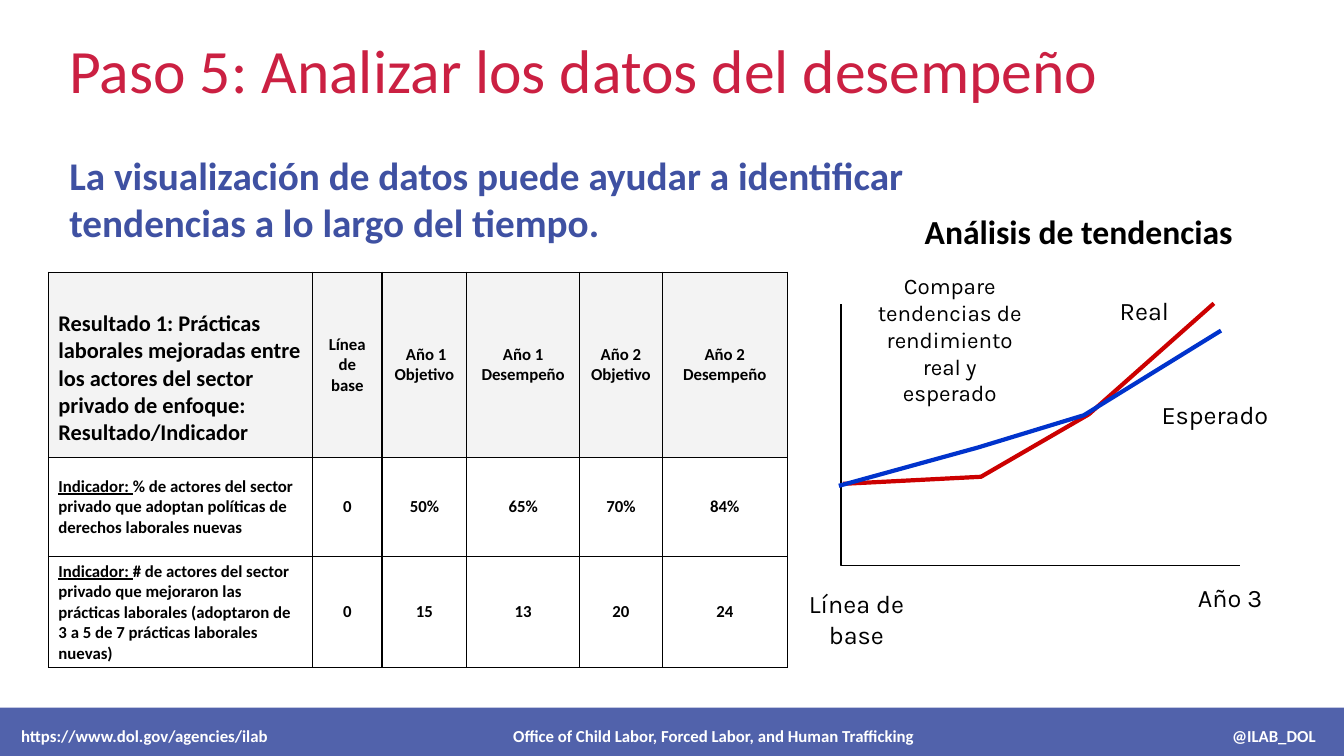
"""Builds the slide on analysing performance data, with an indicator table and a trend sketch."""
from lxml.etree import SubElement
from pptx import Presentation
from pptx.dml.color import RGBColor
from pptx.enum.shapes import MSO_SHAPE as Preset
from pptx.enum.text import MSO_ANCHOR as Anchor, PP_ALIGN as Align
from pptx.oxml import parse_xml
from pptx.oxml.ns import nsdecls, qn
from pptx.util import Inches, Pt

CRIMSON = RGBColor(0xCB, 0x20, 0x42)
INDIGO = RGBColor(0x3F, 0x51, 0xA2)
BLACK = RGBColor(0, 0, 0)
WHITE = RGBColor(0xFF, 0xFF, 0xFF)
HEADER_GRAY = RGBColor(0xF3, 0xF3, 0xF3)
ACTUAL_RED = RGBColor(0xCC, 0, 0)
EXPECTED_BLUE = RGBColor(0, 0x33, 0xCC)


def add_run(paragraph, text, color, **font_format):
    run = paragraph.add_run()
    run.text = text
    run.font.color.rgb = color
    for attribute, value in font_format.items():
        setattr(run.font, attribute, value)


def add_label(box, text, color, align, anchor, **font_format):
    label = slide.shapes.add_textbox(*map(Inches, box))
    label.text_frame.word_wrap = True
    label.text_frame.vertical_anchor = anchor
    paragraph = label.text_frame.paragraphs[0]
    paragraph.alignment = align
    add_run(paragraph, text, color, **font_format)
    return paragraph


prs = Presentation()
prs.slide_width, prs.slide_height = Inches(13.33), Inches(7.5)
slide = prs.slides.add_slide(prs.slide_layouts[6])

title = add_label((0.59, 0, 11.3, 1.45), "Paso 5: Analizar los datos del desempeño", CRIMSON,
                  Align.LEFT, Anchor.MIDDLE, size=Pt(44), name="Calibri")
title.line_spacing = 0.9
add_label((0.59, 1.45, 8.71, 1.04),
          "La visualización de datos puede ayudar a identificar tendencias a lo largo del tiempo.",
          INDIGO, Align.LEFT, Anchor.TOP, size=Pt(28), name="Calibri", bold=True)

column_widths = [2.62, 0.69, 0.84, 1.12, 0.82, 1.24]
row_heights = [1.84, 0.98, 1.1]
outcome = ["Resultado 1: Prácticas laborales mejoradas entre los actores del sector privado de enfoque:",
           "Resultado/Indicador"]
indicator_rows = [
    [outcome, "Línea de base", " Año 1 Objetivo", "Año 1 Desempeño", "Año 2 Objetivo", "Año 2 Desempeño"],
    [["% de actores del sector privado que adoptan políticas de derechos laborales nuevas"],
     "0", "50%", "65%", "70%", "84%"],
    [["# de actores del sector privado que mejoraron las prácticas laborales "
      "(adoptaron de 3 a 5 de 7 prácticas laborales nuevas)"],
     "0", "15", "13", "20", "24"],
]
indicators = slide.shapes.add_table(3, 6, Inches(0.48), Inches(2.7), Inches(7.33), Inches(3.92)).table
indicators.first_row = indicators.horz_banding = False
for column, width in zip(indicators.columns, column_widths):
    column.width = Inches(width)
for r, (height, values) in enumerate(zip(row_heights, indicator_rows)):
    indicators.rows[r].height = Inches(height)
    for c, value in enumerate(values):
        cell = indicators.cell(r, c)
        cell.vertical_anchor = Anchor.MIDDLE
        if r == 0:
            cell.fill.solid()
            cell.fill.fore_color.rgb = HEADER_GRAY
        else:
            cell.fill.background()
        size = Pt(16 if r == c == 0 else 12)
        for i, text in enumerate(value if c == 0 else [value]):
            frame = cell.text_frame
            paragraph = frame.add_paragraph() if i else frame.paragraphs[0]
            paragraph.alignment = Align.CENTER if c else Align.LEFT
            cell_font = dict(size=size, name="Calibri", bold=True)
            if c == 0 and r:
                add_run(paragraph, "Indicador: ", BLACK, underline=True, **cell_font)
            add_run(paragraph, text, BLACK, **cell_font)
        properties = cell._tc.get_or_add_tcPr()
        for i, side in enumerate("LRTB"):
            properties.insert(i, parse_xml(
                f'<a:ln{side} {nsdecls("a")} w="12700"><a:solidFill><a:srgbClr val="{BLACK}"/>'
                f'</a:solidFill></a:ln{side}>'))
indicators.cell(0, 0).margin_top = Inches(0.32)

add_label((8.32, 1.91, 4.76, 0.77), "Análisis de tendencias", BLACK,
          Align.CENTER, Anchor.MIDDLE, size=Pt(24), name="Calibri", bold=True)

trend_lines = [
    ([(8.34, 3.02), (8.34, 5.61), (12.3, 5.61)], BLACK, 1),
    ([(8.36, 4.8), (9.73, 4.73), (10.8, 4.11), (12.04, 3.01)], ACTUAL_RED, 3),
    ([(8.32, 4.82), (9.7, 4.44), (10.75, 4.12), (12.11, 3.28)], EXPECTED_BLUE, 3),
]
for points, color, width in trend_lines:
    start, *rest = [(Inches(x), Inches(y)) for x, y in points]
    builder = slide.shapes.build_freeform(*start)
    builder.add_line_segments(rest, close=False)
    trend = builder.convert_to_shape()
    trend.shadow.inherit = False
    trend.fill.background()
    trend.line.color.rgb = color
    trend.line.width = Pt(width)

trend_labels = [
    ((10.81, 2.88, 1.08, 0.4), "Real", 18),
    ((11.35, 3.91, 1.4, 0.4), "Esperado", 18),
    ((11.66, 5.73, 1.08, 0.4), "Año 3", 18),
    ((7.86, 5.79, 1.27, 0.71), "Línea de base", 18),
    ((8.59, 2.65, 1.66, 1.45), "Compare tendencias de rendimiento real y esperado", 16),
]
for box, text, size in trend_labels:
    add_label(box, text, BLACK, Align.CENTER, Anchor.TOP, size=Pt(size), name="Karla")

footer = slide.shapes.add_shape(Preset.RECTANGLE, Inches(0), Inches(7.02), Inches(13.37), Inches(0.56))
footer.shadow.inherit = False
footer.line.fill.background()
footer.fill.solid()
footer.fill.fore_color.rgb = INDIGO
footer_color = footer.fill._xPr.find(qn("a:solidFill"))[0]
SubElement(footer_color, qn("a:alpha"), val="90000")
footer.text_frame.margin_left = Inches(0.21)
footer.text_frame.vertical_anchor = Anchor.MIDDLE
footer_line = footer.text_frame.paragraphs[0]
footer_line.alignment = Align.LEFT
tab_stops = SubElement(footer_line._p.get_or_add_pPr(), qn("a:tabLst"))
for position, align in [(6.87, "ctr"), (12.84, "r")]:
    SubElement(tab_stops, qn("a:tab"), pos=str(Inches(position)), algn=align)
add_run(footer_line,
        "https://www.dol.gov/agencies/ilab\tOffice of Child Labor, Forced Labor, and Human Trafficking\t@ILAB_DOL",
        WHITE, size=Pt(12), name="Calibri", bold=True)

prs.save("out.pptx")
